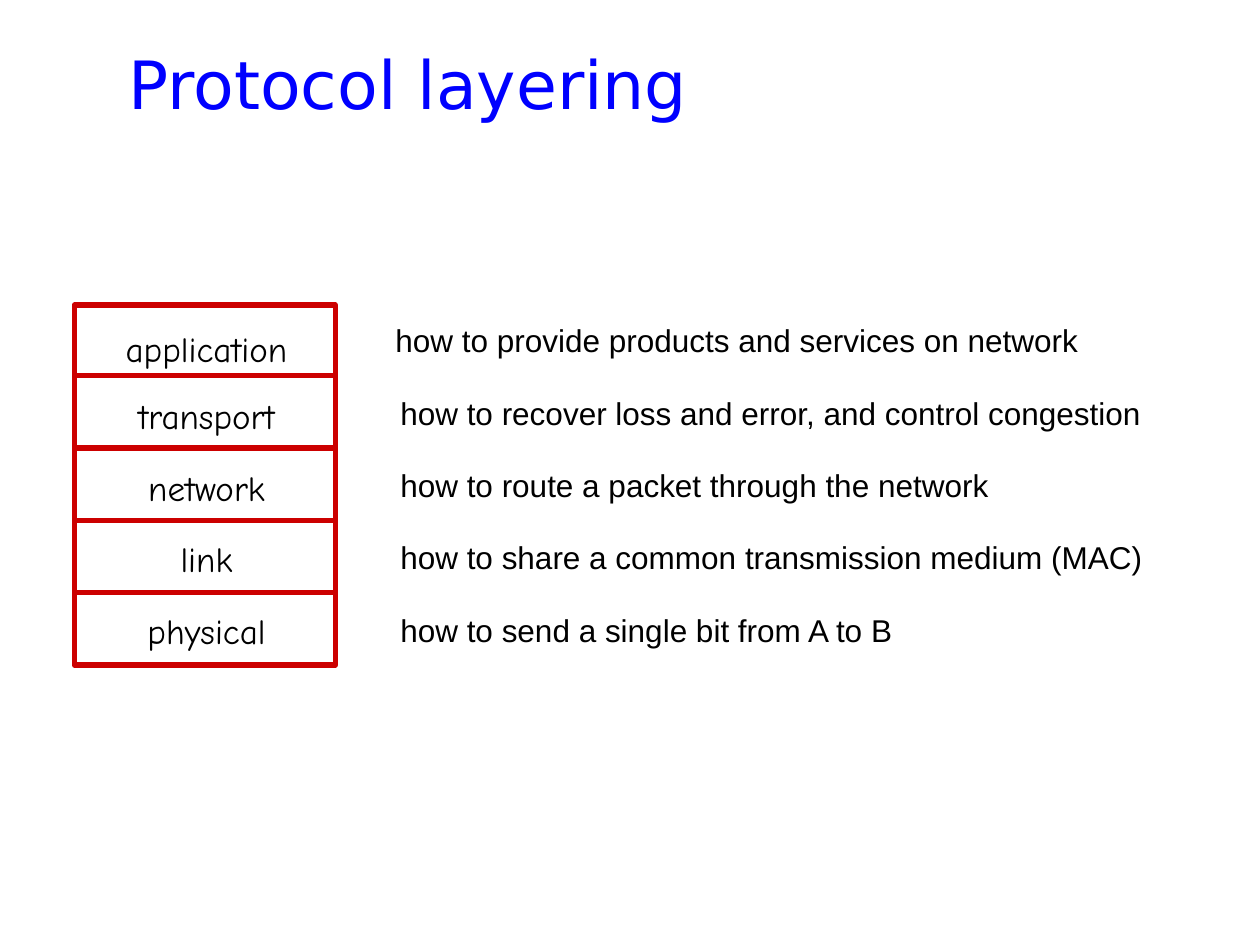
"""Build the slide on protocol layering."""
from dataclasses import dataclass

from lxml import etree
from pptx import Presentation
from pptx.dml.color import RGBColor
from pptx.enum.shapes import MSO_CONNECTOR, MSO_SHAPE
from pptx.enum.text import MSO_ANCHOR, MSO_AUTO_SIZE, PP_ALIGN
from pptx.oxml.ns import qn
from pptx.slide import Slide
from pptx.text.text import TextFrame, _Paragraph
from pptx.util import Cm, Pt

RECTANGLE = MSO_SHAPE.RECTANGLE
STRAIGHT = MSO_CONNECTOR.STRAIGHT
TOP = MSO_ANCHOR.TOP
LEFT, CENTER = PP_ALIGN.LEFT, PP_ALIGN.CENTER
NO_FIT, GROW = MSO_AUTO_SIZE.NONE, MSO_AUTO_SIZE.SHAPE_TO_FIT_TEXT


@dataclass(frozen=True)
class TextStyle:
    font: str
    size: float
    color: RGBColor


@dataclass(frozen=True)
class Theme:
    title: TextStyle = TextStyle("DejaVu Sans", 38, RGBColor(0, 0, 255))
    layer: TextStyle = TextStyle("Comic Neue", 20, RGBColor(0, 0, 0))
    purpose: TextStyle = TextStyle("Arial", 18, RGBColor(0, 0, 0))
    border: RGBColor = RGBColor(204, 0, 0)
    paper: RGBColor = RGBColor(255, 255, 255)
    border_width: float = 3


@dataclass(frozen=True)
class Layer:
    name: str
    purpose: str
    purpose_left: float
    purpose_width: float
    space_before: float


THEME = Theme()
LAYERS = (
    Layer("application", "how to provide products and services on network", 7.72, 14.4, 0),
    Layer("transport", "how to recover loss and error, and control congestion", 7.82, 15.57, 14.4),
    Layer("network", "how to route a packet through the network", 7.82, 12.47, 16.8),
    Layer("link", "how to share a common transmission medium (MAC)", 7.82, 15.62, 16.8),
    Layer("physical", "how to send a single bit from A to B", 7.82, 10.49, 16.8),
)
ROW_PITCH = 1.46
STACK_LEFT, STACK_TOP, STACK_WIDTH, STACK_HEIGHT = 1.5, 6.15, 5.26, 7.26
FIRST_DIVIDER_TOP = 7.57
FIRST_PURPOSE_TOP = 6.35


def add_styled_run(paragraph: _Paragraph, text: str, style: TextStyle) -> None:
    """Append a run in the given style."""
    run = paragraph.add_run()
    run.text = text
    run.font.name = style.font
    run.font.size = Pt(style.size)
    run.font.color.rgb = style.color


def add_label_frame(slide: Slide, left: float, top: float, width: float, height: float) -> TextFrame:
    """Add an unwrapped text box that grows with its text."""
    frame = slide.shapes.add_textbox(Cm(left), Cm(top), Cm(width), Cm(height)).text_frame
    frame.word_wrap = False
    frame.auto_size = GROW
    return frame


def set_title(slide: Slide, text: str) -> None:
    """Place and fill the title placeholder."""
    title = slide.shapes.title
    title.left, title.top, title.width, title.height = Cm(2.34), Cm(0.64), Cm(22.43), Cm(2.34)
    frame = title.text_frame
    frame.auto_size = NO_FIT
    frame.vertical_anchor = TOP
    frame.margin_top = Cm(0.22)
    heading = frame.paragraphs[0]
    heading.alignment = LEFT
    add_styled_run(heading, text, THEME.title)


def draw_stack(slide: Slide) -> None:
    """Draw the outlined stack with its layer names."""
    stack = slide.shapes.add_shape(
        RECTANGLE, Cm(STACK_LEFT), Cm(STACK_TOP), Cm(STACK_WIDTH), Cm(STACK_HEIGHT))
    stack.shadow.inherit = False
    stack.fill.solid()
    stack.fill.fore_color.rgb = THEME.paper
    stack.line.color.rgb = THEME.border
    stack.line.width = Pt(THEME.border_width)

    names = add_label_frame(slide, 2.16, 6.48, 4.01, 6.78)
    for index, layer in enumerate(LAYERS):
        name = names.add_paragraph() if index else names.paragraphs[0]
        name.alignment = CENTER
        if layer.space_before:
            name.space_before = Pt(layer.space_before)
        add_styled_run(name, layer.name, THEME.layer)


def draw_divider(slide: Slide, top: float) -> None:
    """Draw a line between two layers."""
    divider = slide.shapes.add_connector(
        STRAIGHT, Cm(STACK_LEFT), Cm(top), Cm(STACK_LEFT + STACK_WIDTH), Cm(top))
    divider.line.color.rgb = THEME.border
    divider.line.width = Pt(THEME.border_width)
    etree.SubElement(divider._element.spPr, qn("a:effectLst"))


def draw_purpose(slide: Slide, layer: Layer, top: float) -> None:
    """Write what a layer is for."""
    frame = add_label_frame(slide, layer.purpose_left, top, layer.purpose_width, 1.02)
    add_styled_run(frame.paragraphs[0], layer.purpose, THEME.purpose)


def main() -> None:
    """Build and save the presentation."""
    presentation = Presentation()
    presentation.slide_width, presentation.slide_height = Cm(25.4), Cm(19.05)
    slide = presentation.slides.add_slide(presentation.slide_layouts[5])
    set_title(slide, "Protocol layering")
    draw_stack(slide)
    for row in range(len(LAYERS) - 1):
        draw_divider(slide, FIRST_DIVIDER_TOP + row * ROW_PITCH)
    for row, layer in enumerate(LAYERS):
        draw_purpose(slide, layer, FIRST_PURPOSE_TOP + row * ROW_PITCH)
    presentation.save("out.pptx")


if __name__ == "__main__":
    main()
